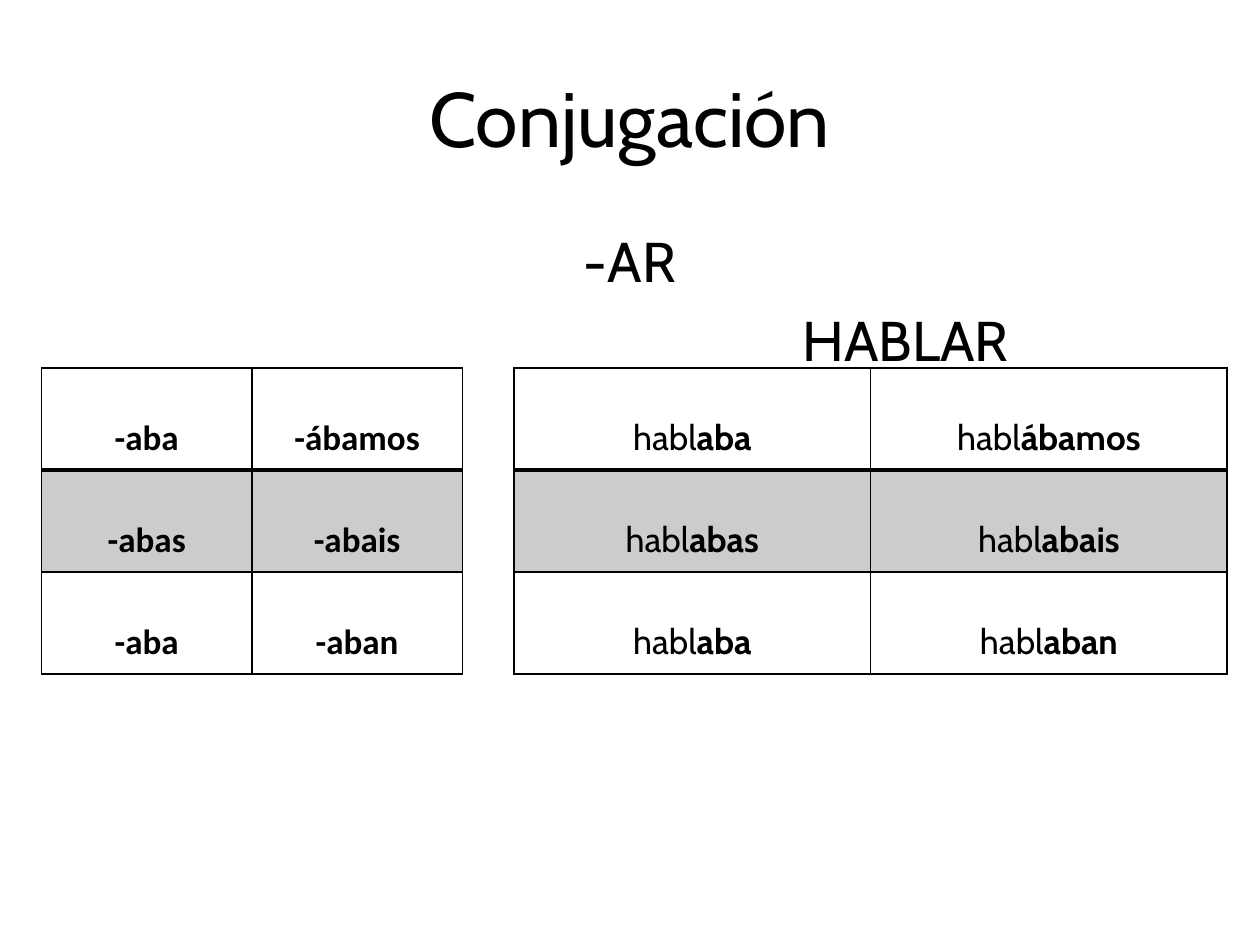
from pptx import Presentation
from pptx.dml.color import RGBColor
from pptx.enum.text import MSO_ANCHOR, MSO_AUTO_SIZE, PP_ALIGN
from pptx.oxml import parse_xml
from pptx.oxml.ns import nsdecls, qn
from pptx.util import Inches, Pt
from lxml.etree import SubElement

BLACK = RGBColor(0, 0, 0)
TEXT_FONT = "Cabin"
ENDING_FONT = "Calibri"

ENDINGS = [("-aba", "-ábamos"), ("-abas", "-abais"), ("-aba", "-aban")]
STEM = "habl"


class SlideBuilder:
    def __init__(self, deck):
        self.page = deck.slides.add_slide(deck.slide_layouts[1])

    def place(self, shape, left, top, width, height):
        frame = dict(left=left, top=top, width=width, height=height)
        for name, value in frame.items():
            setattr(shape, name, Inches(value))

    def add_span(self, para, text, size, name=TEXT_FONT, bold=False):
        span = para.add_run()
        span.text = text
        style = dict(size=Pt(size), name=name, bold=bold)
        for key, value in style.items():
            setattr(span.font, key, value)
        span.font.color.rgb = BLACK

    def title(self, text, *bounds):
        box = self.page.shapes.title
        self.place(box, *bounds)
        box.text_frame.vertical_anchor = MSO_ANCHOR.MIDDLE
        para = box.text_frame.paragraphs[0]
        para.alignment = PP_ALIGN.CENTER
        self.add_span(para, text, 44)

    def body(self, lines, *bounds):
        """Fill the body with unbulleted (text, alignment, left indent) lines."""
        box = self.page.placeholders[1]
        self.place(box, *bounds)
        frame = box.text_frame
        frame.auto_size = MSO_AUTO_SIZE.NONE
        for index, (text, alignment, indent) in enumerate(lines):
            para = frame.add_paragraph() if index else frame.paragraphs[0]
            properties = para._p.get_or_add_pPr()
            properties.set("marL", str(Inches(indent)))
            properties.set("indent", "0")
            SubElement(properties, qn("a:buNone"))
            para.alignment = alignment
            para.space_before = Pt(6.4 if index else 0)
            self.add_span(para, text, 32)

    def set_borders(self, cell, widths):
        properties = cell._tc.get_or_add_tcPr()
        for side, width in widths.items():
            properties.append(parse_xml(
                f'<a:ln{side} {nsdecls("a")} w="{Pt(width)}"><a:solidFill>'
                f'<a:srgbClr val="{BLACK}"/></a:solidFill></a:ln{side}>'))

    def shade(self, cell, percent):
        cell.fill.solid()
        cell.fill.fore_color.rgb = BLACK
        color = cell._tc.tcPr.find(qn("a:solidFill")).find(qn("a:srgbClr"))
        SubElement(color, qn("a:alpha"), val=str(percent * 1000))

    def table(self, rows, left, top, column_width, row_height):
        """Draw rows of cells, each cell a list of (text, font, bold) spans."""
        columns = len(rows[0])
        table = self.page.shapes.add_table(
            len(rows), columns, Inches(left), Inches(top),
            Inches(column_width * columns), Inches(row_height * len(rows))).table
        table.first_row = table.horz_banding = False
        for row_index, row in enumerate(rows):
            for column_index, spans in enumerate(row):
                cell = table.cell(row_index, column_index)
                cell.margin_top = Inches(0.39)
                para = cell.text_frame.paragraphs[0]
                para.alignment = PP_ALIGN.CENTER
                for text, font, bold in spans:
                    self.add_span(para, text, 20, font, bold)
                self.set_borders(cell, {
                    "L": 1, "R": 1,
                    "T": 2 if row_index == 1 else 1,
                    "B": 2 if row_index == 0 else 1})
                if row_index % 2:
                    self.shade(cell, 20)
                else:
                    cell.fill.background()


def main():
    deck = Presentation()
    deck.slide_width, deck.slide_height = Inches(10), Inches(7.5)
    slide = SlideBuilder(deck)
    slide.title("Conjugación", 0.5, 0.3, 9, 1.25)
    slide.body([("-AR", PP_ALIGN.CENTER, 0), ("HABLAR", PP_ALIGN.LEFT, 5.77)],
               0.5, 1.75, 9, 4.95)
    endings = [[[(ending, ENDING_FONT, True)] for ending in row]
               for row in ENDINGS]
    verbs = [[[(STEM, TEXT_FONT, False), (ending[1:], TEXT_FONT, True)]
              for ending in row] for row in ENDINGS]
    slide.table(endings, 0.33, 2.92, 1.67, 0.81)
    slide.table(verbs, 4.08, 2.92, 2.83, 0.81)
    deck.save("out.pptx")


if __name__ == "__main__":
    main()
